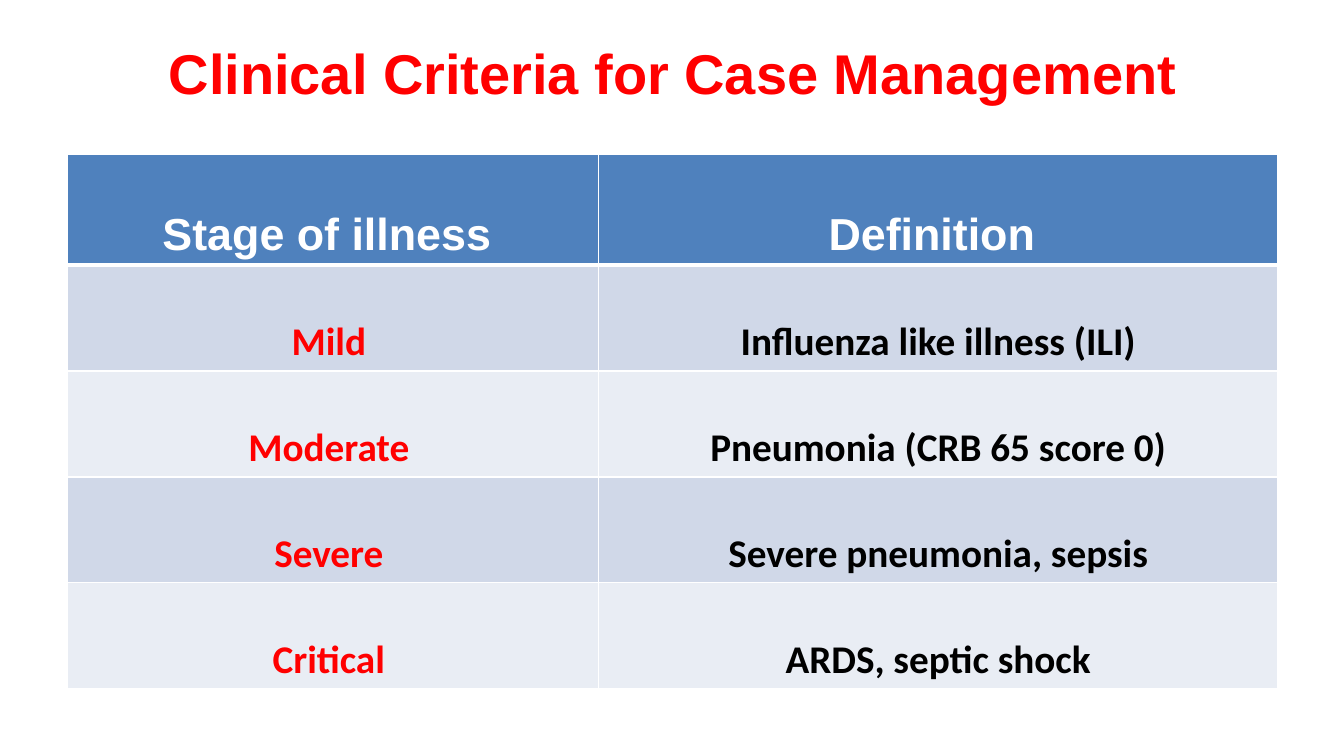
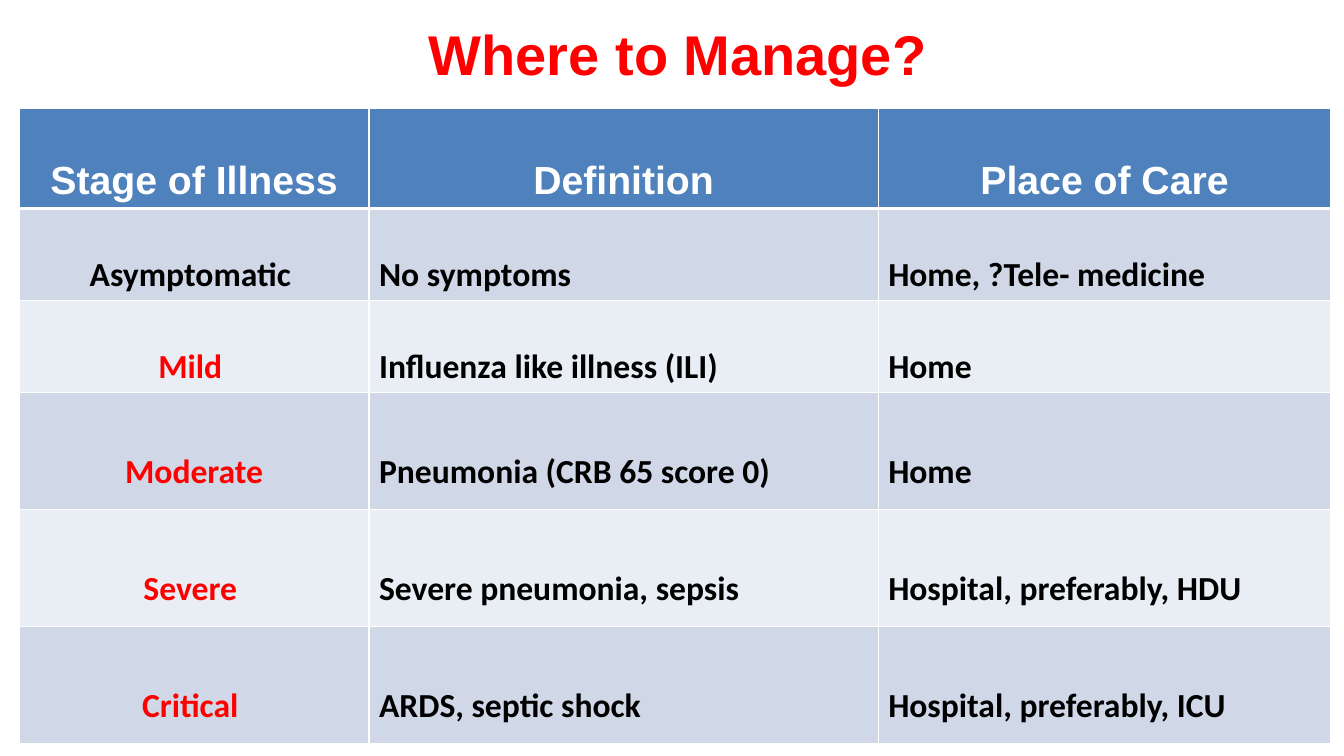
from lxml import etree
from pptx import Presentation
from pptx.dml.color import RGBColor
from pptx.enum.text import MSO_ANCHOR, PP_ALIGN
from pptx.oxml.ns import qn
from pptx.util import Inches, Pt

CENTER, LEFT = PP_ALIGN.CENTER, PP_ALIGN.LEFT
MIDDLE = MSO_ANCHOR.MIDDLE
RED = RGBColor(0xFF, 0x00, 0x00)
BLACK = RGBColor(0x00, 0x00, 0x00)
WHITE = RGBColor(0xFF, 0xFF, 0xFF)
BLUE = RGBColor(0x4F, 0x81, 0xBD)
BANDS = RGBColor(0xD0, 0xD8, 0xE8), RGBColor(0xE9, 0xED, 0xF4)
HEAD, BODY = "Arial", "Calibri"
TITLE_ONLY = 5

CRITERIA = [
    ["Stage of illness ", "Definition "],
    ["Mild ", "Influenza like illness (ILI)"],
    ["Moderate ", "Pneumonia (CRB 65 score 0)"],
    ["Severe ", "Severe pneumonia, sepsis"],
    ["Critical ", "ARDS, septic shock"],
]
PLACES = [
    ["Stage of Illness", "Definition", "Place of Care"],
    ["Asymptomatic ", "No symptoms", "Home, ?Tele- medicine"],
    ["Mild ", "Influenza like illness (ILI)", "Home"],
    ["Moderate", "Pneumonia (CRB 65 score 0)", "Home"],
    ["Severe ", "Severe pneumonia, sepsis", "Hospital, preferably, HDU"],
    ["Critical ", "ARDS, septic shock", "Hospital, preferably, ICU"],
]


def write(frame, text, size, color, font=HEAD, align=CENTER, space=1.0):
    para = frame.paragraphs[0]
    para.alignment = align
    para.line_spacing = space
    run = para.add_run()
    run.text = text
    run.font.name = font
    run.font.size = Pt(size)
    run.font.bold = True
    run.font.color.rgb = color


def add_title(slide, text, box):
    title = slide.shapes.title
    title.left, title.top, title.width, title.height = map(Inches, box)
    title.text_frame.word_wrap = True
    title.text_frame.vertical_anchor = MIDDLE
    write(title.text_frame, text, 40, RED)


def add_edges(cell, low):
    props = cell._tc.get_or_add_tcPr()
    widths = {"a:lnL": 1, "a:lnR": 1, "a:lnT": 1, "a:lnB": low}
    for spot, (tag, width) in enumerate(widths.items()):
        line = etree.Element(qn(tag), w=str(Pt(width)))
        fill = etree.SubElement(line, qn("a:solidFill"))
        etree.SubElement(fill, qn("a:srgbClr"), val=str(WHITE))
        props.insert(spot, line)


def split(total, parts):
    return [int(total * part / sum(parts)) for part in parts]


def add_grid(slide, data, box, cols, rows, sizes, align):
    left, top, width, height = map(Inches, box)
    table = slide.shapes.add_table(len(rows), len(cols), left, top, width, height).table
    for col, size in zip(table.columns, split(width, cols)):
        col.width = size
    for row, size in zip(table.rows, split(height, rows)):
        row.height = size
    for r, texts in enumerate(data):
        for c, text in enumerate(texts):
            cell = table.cell(r, c)
            cell.vertical_anchor = MIDDLE
            cell.fill.solid()
            cell.fill.fore_color.rgb = BANDS[(r - 1) % 2] if r else BLUE
            add_edges(cell, 1 if r else 3)
            if r == 0:
                write(cell.text_frame, text, sizes[0], WHITE, space=2.0)
            else:
                ill = c == 0 and not text.startswith("Asymptomatic")
                write(cell.text_frame, text, sizes[1], RED if ill else BLACK,
                      font=BODY, align=align if c else CENTER, space=2.0)


def add_page(deck, title, place, **grid):
    slide = deck.slides.add_slide(deck.slide_layouts[TITLE_ONLY])
    add_title(slide, title, place)
    add_grid(slide, **grid)


def main():
    deck = Presentation()
    deck.slide_width, deck.slide_height = Inches(13.33), Inches(7.5)
    add_page(deck, "Clinical Criteria for Case Management", (0.67, 0.09, 12, 1.25),
             data=CRITERIA, box=(0.67, 1.53, 12, 5.3), cols=(5.27, 6.73),
             rows=(1.1, 1.05, 1.05, 1.05, 1.05), sizes=(32, 28), align=CENTER)
    add_page(deck, "Where to Manage?", (0.97, 0.07, 11.5, 0.91),
             data=PLACES, box=(0.19, 1.08, 13.01, 6.29), cols=(3.47, 5.05, 4.49),
             rows=(0.99, 0.91, 0.91, 1.16, 1.16, 1.16), sizes=(28, 24), align=LEFT)
    deck.save("out.pptx")


if __name__ == "__main__":
    main()
